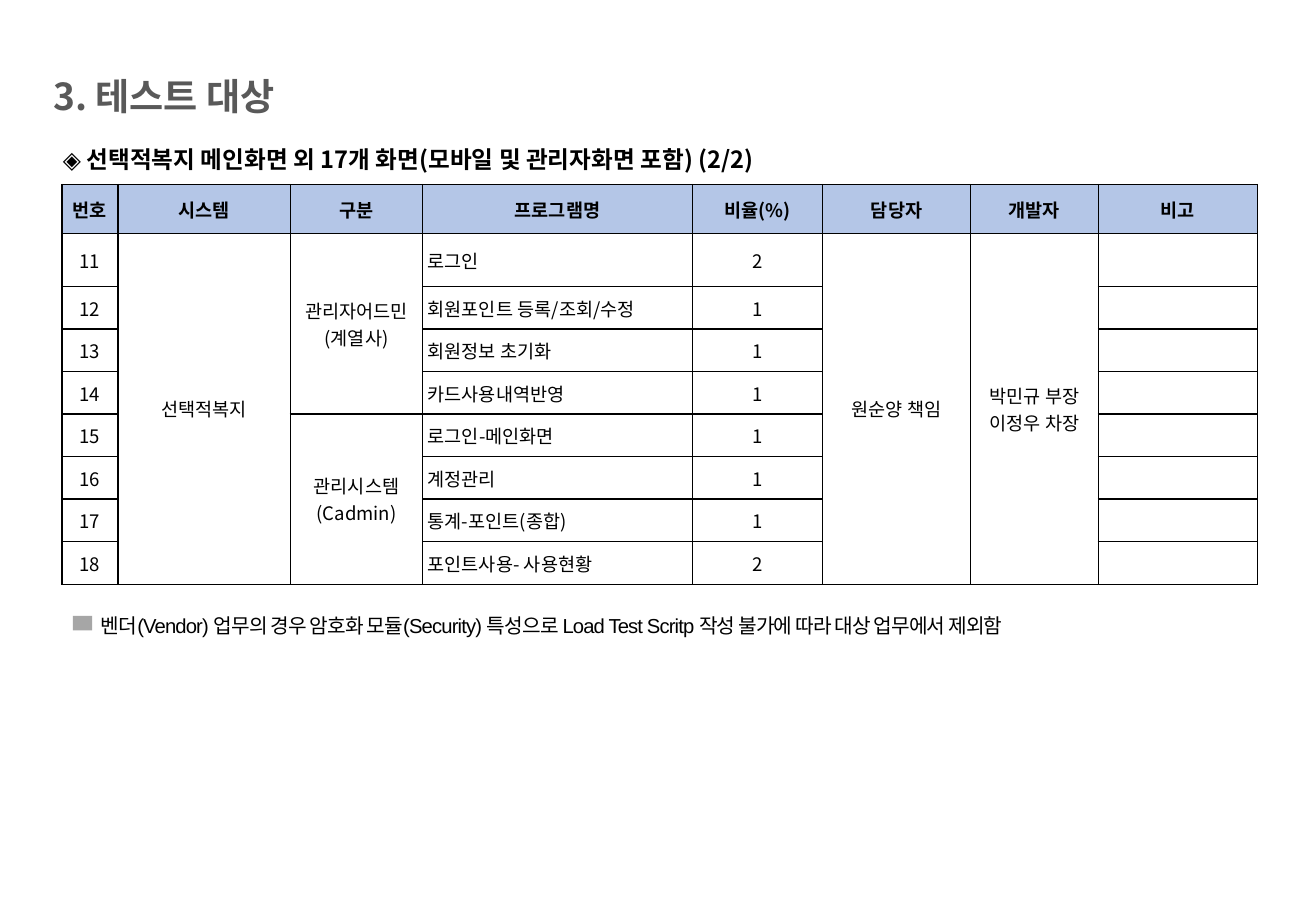
from lxml import etree
from pptx import Presentation
from pptx.dml.color import RGBColor
from pptx.enum.shapes import MSO_SHAPE
from pptx.enum.text import MSO_ANCHOR, MSO_AUTO_SIZE, PP_ALIGN
from pptx.oxml.ns import qn
from pptx.util import Inches, Pt

LEFT, CENTER = PP_ALIGN.LEFT, PP_ALIGN.CENTER
TOP, MIDDLE = MSO_ANCHOR.TOP, MSO_ANCHOR.MIDDLE
NO_AUTOFIT = MSO_AUTO_SIZE.NONE
RECTANGLE = MSO_SHAPE.RECTANGLE

KOREAN_FONT = "Noto Sans CJK KR"
BLACK, GRAY, MARKER_GRAY = "000000", "595959", "A6A6A6"
WHITE, HEADER_BLUE = "FFFFFF", "B4C6E7"

HEADERS = ["번호", "시스템", "구분", "프로그램명", "비율(%)", "담당자", "개발자", "비고"]
COLUMN_WIDTHS = [0.46, 1.42, 1.09, 2.22, 1.07, 1.22, 1.05, 1.31]
ROW_HEIGHTS = [0.4, 0.44] + [0.35] * 7
FIRST_NUMBER = 11
NAME_COLUMN, RATIO_COLUMN = 3, 4
PROGRAMS = [
    ("로그인", 2),
    ("회원포인트 등록/조회/수정", 1),
    ("회원정보 초기화", 1),
    ("카드사용내역반영", 1),
    ("로그인-메인화면", 1),
    ("계정관리", 1),
    ("통계-포인트(종합)", 1),
    ("포인트사용- 사용현황", 2),
]
# first row, last row, column, text
MERGED_CELLS = [
    (1, 8, 1, "선택적복지"),
    (1, 4, 2, "관리자어드민(계열사)"),
    (5, 8, 2, "관리시스템(Cadmin)"),
    (1, 8, 5, "원순양 책임"),
    (1, 8, 6, "박민규 부장\n이정우 차장"),
]


def color(value):
    return RGBColor.from_string(value)


def format_paragraph(paragraph, size, text_color=BLACK, bold=False, align=LEFT,
                     font_name=KOREAN_FONT, line_spacing=None, spacing=None):
    paragraph.alignment = align
    paragraph.line_spacing = line_spacing
    font = paragraph.font
    font.name, font.size, font.bold = font_name, Pt(size), bold
    font.color.rgb = color(text_color)
    # Korean typeface and letter spacing
    properties = paragraph._p.pPr.find(qn("a:defRPr"))
    etree.SubElement(properties, qn("a:ea"), typeface=KOREAN_FONT)
    if spacing is not None:
        properties.set("spc", str(int(spacing * 100)))


def set_margins(target, left, top, right, bottom):
    target.margin_left, target.margin_top = Inches(left), Inches(top)
    target.margin_right, target.margin_bottom = Inches(right), Inches(bottom)


def fill_text(shape, text, anchor, **formatting):
    frame = shape.text_frame
    frame.word_wrap = True
    frame.auto_size = NO_AUTOFIT
    frame.vertical_anchor = anchor
    frame.text = text
    format_paragraph(frame.paragraphs[0], **formatting)


def add_title(slide, text):
    title = slide.shapes.title
    title.left, title.top = Inches(0.34), Inches(0.56)
    title.width, title.height = Inches(6.44), Inches(0.45)
    fill_text(title, text, MIDDLE, size=22, text_color=GRAY, bold=True)


def add_text(slide, box, text, margins=(0.1, 0.05, 0.1, 0.05), **formatting):
    shape = slide.shapes.add_textbox(*map(Inches, box))
    set_margins(shape.text_frame, *margins)
    fill_text(shape, text, TOP, **formatting)


def add_marker(slide, box):
    marker = slide.shapes.add_shape(RECTANGLE, *map(Inches, box))
    marker.shadow.inherit = False
    marker.fill.solid()
    marker.fill.fore_color.rgb = color(MARKER_GRAY)
    marker.line.fill.background()


def add_borders(cell):
    properties = cell._tc.get_or_add_tcPr()
    for index, side in enumerate(("lnL", "lnR", "lnT", "lnB")):
        line = etree.Element(qn(f"a:{side}"), w=str(Pt(1)))
        fill = etree.SubElement(line, qn("a:solidFill"))
        etree.SubElement(fill, qn("a:srgbClr"), val=BLACK)
        properties.insert(index, line)


def format_cell(cell, row, column):
    is_header = row == 0
    is_name = column == NAME_COLUMN and not is_header
    cell.vertical_anchor = MIDDLE
    set_margins(cell, 0.04 if is_name else 0, 0, 0, 0)
    cell.fill.solid()
    cell.fill.fore_color.rgb = color(HEADER_BLUE if is_header else WHITE)
    for paragraph in cell.text_frame.paragraphs:
        format_paragraph(paragraph, 11, bold=is_header,
                         align=LEFT if is_name else CENTER)
    add_borders(cell)


def add_program_table(slide):
    frame = slide.shapes.add_table(
        len(ROW_HEIGHTS), len(COLUMN_WIDTHS), Inches(0.51), Inches(1.52),
        Inches(sum(COLUMN_WIDTHS)), Inches(sum(ROW_HEIGHTS)))
    table = frame.table
    for column, width in zip(table.columns, COLUMN_WIDTHS):
        column.width = Inches(width)
    for row, height in zip(table.rows, ROW_HEIGHTS):
        row.height = Inches(height)

    # Contents
    for column, header in enumerate(HEADERS):
        table.cell(0, column).text = header
    for row, (name, ratio) in enumerate(PROGRAMS, start=1):
        table.cell(row, 0).text = str(FIRST_NUMBER + row - 1)
        table.cell(row, NAME_COLUMN).text = name
        table.cell(row, RATIO_COLUMN).text = str(ratio)
    for first, last, column, text in MERGED_CELLS:
        table.cell(first, column).merge(table.cell(last, column))
        table.cell(first, column).text = text

    # Formatting
    for row in range(len(ROW_HEIGHTS)):
        for column in range(len(COLUMN_WIDTHS)):
            format_cell(table.cell(row, column), row, column)


def main():
    presentation = Presentation()
    presentation.slide_width = Inches(10.83)
    presentation.slide_height = Inches(7.5)
    slide = presentation.slides.add_slide(presentation.slide_layouts[5])

    # Headings and table
    add_title(slide, "3. 테스트 대상")
    add_program_table(slide)
    add_text(slide, (0.42, 1.11, 9.93, 0.29),
             "◈ 선택적복지 메인화면 외 17개 화면(모바일 및 관리자화면 포함) (2/2)",
             size=14, bold=True, line_spacing=1.15)

    # Note on excluded work
    add_text(slide, (0.83, 4.99, 9.12, 0.31),
             "벤더(Vendor) 업무의 경우 암호화 모듈(Security) 특성으로 "
             "Load Test Scritp 작성 불가에 따라 대상 업무에서 제외함",
             margins=(0, 0, 0, 0), size=12, font_name="Arial",
             line_spacing=1.3, spacing=-0.5)
    add_marker(slide, (0.6, 5.07, 0.16, 0.12))

    presentation.save("out.pptx")


if __name__ == "__main__":
    main()
